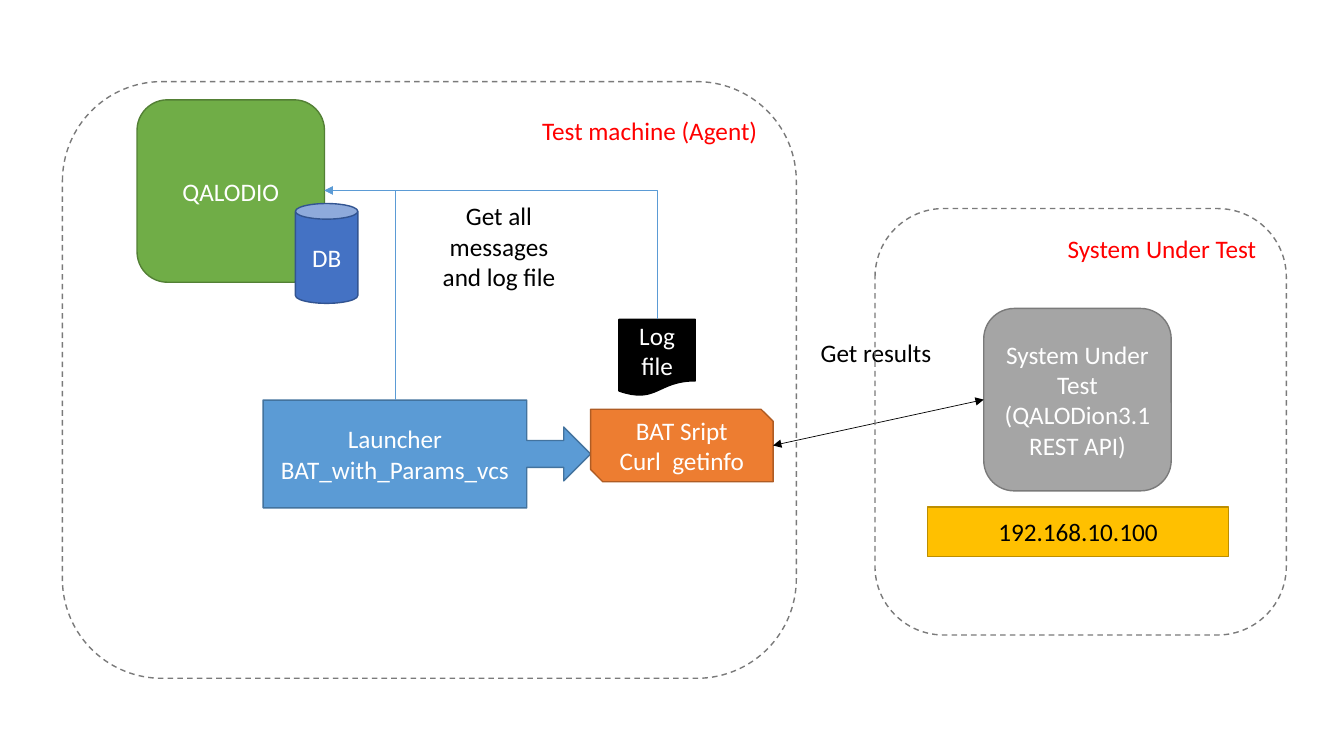
from lxml import etree
from pptx import Presentation
from pptx.dml.color import RGBColor
from pptx.enum.dml import MSO_LINE
from pptx.enum.shapes import MSO_CONNECTOR, MSO_SHAPE
from pptx.enum.text import MSO_ANCHOR, PP_ALIGN
from pptx.oxml.ns import qn
from pptx.util import Pt

ROUND = MSO_SHAPE.ROUNDED_RECTANGLE
RECT = MSO_SHAPE.RECTANGLE
CALLOUT = MSO_SHAPE.RIGHT_ARROW_CALLOUT
SNIP = MSO_SHAPE.SNIP_2_DIAG_RECTANGLE
DOC = MSO_SHAPE.FLOWCHART_DOCUMENT
CAN = MSO_SHAPE.CAN
STRAIGHT = MSO_CONNECTOR.STRAIGHT
ELBOW = MSO_CONNECTOR.ELBOW
DASH = MSO_LINE.DASH
TOP = MSO_ANCHOR.TOP
MIDDLE = MSO_ANCHOR.MIDDLE
CENTER = PP_ALIGN.CENTER
RIGHT = PP_ALIGN.RIGHT

HEX = {
    "white": "FFFFFF", "black": "000000", "red": "FF0000",
    "green": "70AD47", "moss": "538035",
    "gray": "A5A5A5", "slate": "7A7A7A",
    "gold": "FFC000", "amber": "BD8E00",
    "sky": "5B9BD5", "steel": "43739E",
    "orange": "ED7D31", "rust": "AF5C24",
    "blue": "4472C4", "navy": "325491",
}


def tint(name):
    """Return the named colour."""
    return RGBColor.from_string(HEX[name])


class Board:
    """Hold the text style and the current slide."""

    def __init__(self, slide, font="Calibri", size=18):
        """Keep the slide, font and size."""
        self.slide = slide
        self.font = font
        self.size = size

    def letter(self, shape, text, color, align, anchor):
        """Put styled text into a shape."""
        frame = shape.text_frame
        frame.text = text
        frame.word_wrap = True
        frame.vertical_anchor = anchor
        for para in frame.paragraphs:
            para.alignment = align
            for run in para.runs:
                run.font.name = self.font
                run.font.size = Pt(self.size)
                run.font.color.rgb = tint(color)

    def box(self, kind, area, text, fill=None, edge=None, color="white",
            align=CENTER, anchor=MIDDLE):
        """Add a shape with text."""
        shape = self.slide.shapes.add_shape(kind, *map(Pt, area))
        shape.shadow.inherit = False
        if fill:
            shape.fill.solid()
            shape.fill.fore_color.rgb = tint(fill)
        else:
            shape.fill.background()
        if edge:
            shape.line.color.rgb = tint(edge)
            shape.line.width = Pt(1)
        else:
            shape.line.fill.background()
        self.letter(shape, text, color, align, anchor)
        return shape

    def label(self, area, text):
        """Add a white text label."""
        return self.box(RECT, area, text, "white", color="black")

    def zone(self, area, text):
        """Add a dashed frame with a red title."""
        shape = self.box(ROUND, area, text, None, "slate", "red", RIGHT, TOP)
        shape.line.dash_style = DASH
        return shape

    def link(self, kind, start, end, color, tips):
        """Add a thin connector with arrowheads."""
        line = self.slide.shapes.add_connector(kind, *map(Pt, start + end))
        line.line.color.rgb = tint(color)
        line.line.width = Pt(0.5)
        props = line._element.spPr
        pen = props.find(qn("a:ln"))
        for tip in tips:
            etree.SubElement(pen, qn("a:" + tip), type="triangle")
        etree.SubElement(props, qn("a:effectLst"))
        return line

    def bend(self, start, end):
        """Add an arrow that goes up and then left."""
        wide, high = start[0] - end[0], start[1] - end[1]
        mid_x, mid_y = (start[0] + end[0]) / 2, (start[1] + end[1]) / 2
        low = (mid_x - high / 2, mid_y + wide / 2)
        far = (mid_x + high / 2, mid_y - wide / 2)
        line = self.link(ELBOW, low, far, "sky", ["tailEnd"])
        props = line._element.spPr
        props.find(qn("a:xfrm")).set("rot", "16200000")
        props.find(qn("a:prstGeom")).set("prst", "bentConnector2")


def main():
    """Build the test setup slide."""
    deck = Presentation()
    deck.slide_width, deck.slide_height = Pt(960), Pt(540)
    board = Board(deck.slides.add_slide(deck.slide_layouts[6]))
    hub = (231.8, 136.1)

    board.box(ROUND, (97.9, 71.3, 133.9, 130.3), "QALODIO", "green", "moss")
    target = board.box(ROUND, (702.7, 220.3, 133.9, 130.3),
                       "System Under Test\n(QALODion3.1 REST API)",
                       "gray", "slate")
    board.box(RECT, (662.4, 362.2, 215.3, 35.3), "192.168.10.100",
              "gold", "amber", "black")
    runner = board.box(CALLOUT, (187.9, 285.8, 234, 77),
                       "Launcher\nBAT_with_Params_vcs", "sky", "steel")
    runner.adjustments[3] = 0.805
    board.box(SNIP, (421.9, 292.3, 130.3, 51.8), "BAT Sript\nCurl  getinfo",
              "orange", "rust")
    query = board.link(STRAIGHT, (552.2, 318.2), (702.7, 285.5), "black",
                       ["headEnd", "tailEnd"])
    query.end_connect(target, 1)
    board.box(DOC, (442.1, 228.2, 54.5, 54.7), "Log file", "black", "black")
    board.bend((282.2, 285.8), hub)
    board.label((299.5, 140.4, 113.8, 70.6), "Get all messages and log file")
    board.label((568.8, 216.7, 113.8, 70.6), "Get results")
    board.bend((469.4, 228.2), hub)
    board.zone((625, 149, 293.8, 304.6), "System Under Test")
    board.zone((44.6, 58.3, 524.2, 426.2), "Test machine (Agent)")
    board.box(CAN, (211, 145.4, 44.6, 71.3), "DB", "blue", "navy")
    deck.save("out.pptx")


if __name__ == "__main__":
    main()
